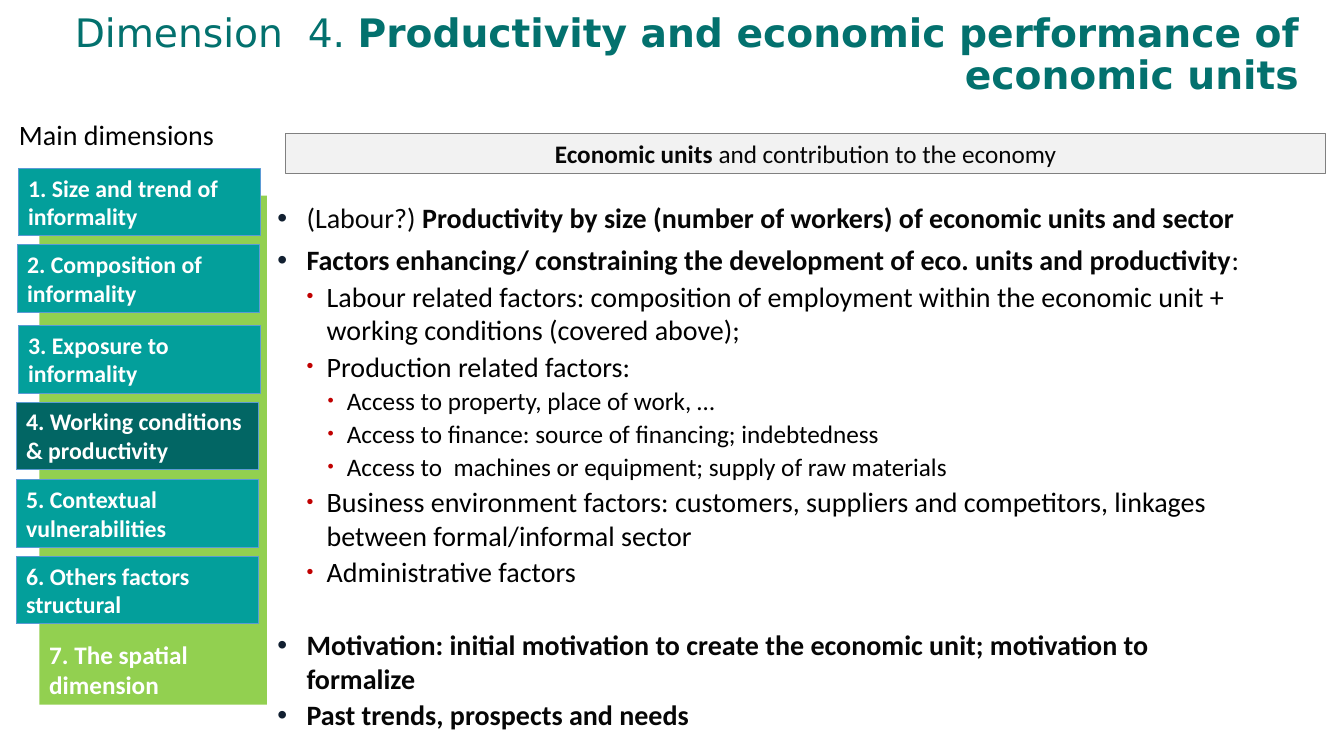
from lxml.etree import SubElement as Sub
from pptx import Presentation
from pptx.dml.color import RGBColor as RGB
from pptx.enum.shapes import MSO_SHAPE as SHAPE
from pptx.enum.text import MSO_ANCHOR as ANCHOR, MSO_AUTO_SIZE as AUTO, PP_ALIGN as ALIGN
from pptx.oxml.ns import qn
from pptx.util import Inches, Pt

TEAL, DARK, GREEN = "039F9B", "026664", "92D050"
BLACK, INK, WHITE = "000000", "060606", "FFFFFF"

STEPS = [
    (0.18, 1.67, "1. Size and trend of informality", TEAL),
    (0.17, 2.43, "2. Composition of informality", TEAL),
    (0.18, 3.23, "3. Exposure to informality", TEAL),
    (0.16, 3.99, "4. Working conditions & productivity", DARK),
    (0.16, 4.76, "5. Contextual vulnerabilities", TEAL),
    (0.16, 5.52, "6. Others factors structural", TEAL),
]

LEVELS = [
    dict(left=0.29, hang=0.29, dot="122031", scale=100, size=20, color=INK),
    dict(left=0.49, hang=0.2, dot="C00000", scale=70, size=20, color=BLACK),
    dict(left=0.69, hang=0.19, dot="C00000", scale=70, size=18, color=BLACK),
]

POINTS = [
    (0, 6, 6, "(Labour?)* Productivity by size (number of workers) of economic units and sector*"),
    (0, 0, 2, "*Factors enhancing/ constraining the development of eco. units and productivity*:"),
    (1, 0, 2, "Labour related factors: composition of employment within the economic unit"
              " + working conditions (covered above);"),
    (1, 0, 2, "Production related factors:"),
    (2, 0, 2, "Access to property, place of work, …"),
    (2, 0, 2, "Access to finance: source of financing; indebtedness"),
    (2, 0, 2, "Access to  machines or equipment; supply of raw materials"),
    (1, 0, 2, "Business environment factors: customers, suppliers and competitors,"
              " linkages between formal/informal sector"),
    (1, 0, 2, "Administrative factors"),
    (0, 26, 2, "*Motivation: initial motivation to create the economic unit; motivation to formalize*"),
    (0, 0, 2, "*Past trends, prospects and needs*"),
]


def rgb(code):
    """Turn a hex string into a colour."""
    return RGB.from_string(code)


def place(shape, left, top, width, height):
    """Move and size a shape, in inches."""
    shape.left, shape.top = Inches(left), Inches(top)
    shape.width, shape.height = Inches(width), Inches(height)


def paint(shape, fill, line=None):
    """Set the fill and the outline of a shape."""
    shape.fill.solid()
    shape.fill.fore_color.rgb = rgb(fill)
    if line:
        shape.line.color.rgb = rgb(line)
        shape.line.width = Pt(0.75)
    else:
        shape.line.fill.background()


def setup(frame, anchor=ANCHOR.TOP):
    """Wrap the text of a frame and fix its anchor."""
    frame.word_wrap = True
    frame.auto_size = AUTO.NONE
    frame.vertical_anchor = anchor


def write(para, text, size, color, align=ALIGN.LEFT, face="Calibri"):
    """Fill a paragraph; parts between asterisks are bold."""
    para.alignment = align
    font = para.font
    font.name, font.size, font.color.rgb = face, Pt(size), rgb(color)
    for num, part in enumerate(text.split("*")):
        if part:
            run = para.add_run()
            run.text = part
            run.font.bold = num % 2 == 1


def box(slide, area, fill, line, lines, size, color, align=ALIGN.LEFT, anchor=ANCHOR.TOP):
    """Add a filled rectangle with lines of text."""
    shape = slide.shapes.add_shape(SHAPE.RECTANGLE, *map(Inches, area))
    shape.shadow.inherit = False
    paint(shape, fill, line)
    frame = shape.text_frame
    setup(frame, anchor)
    for num, text in enumerate(lines):
        para = frame.add_paragraph() if num else frame.paragraphs[0]
        write(para, text, size, color, align)
    return shape


def bullet(para, left, hang, dot, scale):
    """Give a paragraph its indent and its coloured bullet."""
    props = para._p.get_or_add_pPr()
    props.set("marL", str(Inches(left)))
    props.set("indent", str(-Inches(hang)))
    Sub(Sub(props, qn("a:buClr")), qn("a:srgbClr"), val=dot)
    Sub(props, qn("a:buSzPct"), val=str(scale * 1000))
    Sub(props, qn("a:buFont"), typeface="Arial")
    Sub(props, qn("a:buChar"), char="•")


def points(body):
    """Write the bulleted list into the body placeholder."""
    place(body, 2.65, 1.94, 9.96, 5.41)
    paint(body, WHITE, WHITE)
    frame = body.text_frame
    setup(frame)
    for num, (level, before, after, text) in enumerate(POINTS):
        para = frame.add_paragraph() if num else frame.paragraphs[0]
        look = LEVELS[level]
        para.level = level
        para.space_before, para.space_after = Pt(before), Pt(after)
        bullet(para, look["left"], look["hang"], look["dot"], look["scale"])
        write(para, text, look["size"], look["color"])


def heading(title):
    """Write the slide title."""
    place(title, 0.31, 0.05, 12.67, 1.01)
    setup(title.text_frame, ANCHOR.MIDDLE)
    para = title.text_frame.paragraphs[0]
    para.line_spacing = 0.9
    text = "Dimension  4. *Productivity and economic performance of economic units*"
    write(para, text, 28, "03716E", ALIGN.RIGHT, "DejaVu Sans")


def label(slide):
    """Add the caption above the dimensions."""
    area = map(Inches, (0.09, 1.12, 2.2, 0.77))
    frame = slide.shapes.add_textbox(*area).text_frame
    setup(frame)
    write(frame.paragraphs[0], "Main dimensions", 20, BLACK)


def main():
    """Build and save the slide."""
    deck = Presentation()
    deck.slide_width, deck.slide_height = Inches(13.33), Inches(7.5)
    slide = deck.slides.add_slide(deck.slide_layouts[1])
    title, body = slide.placeholders
    heading(title)
    points(body)
    space = box(slide, (0.39, 1.94, 2.63, 5.05), GREEN, None,
                ["*7. The spatial*", "*dimension*"], 18, WHITE, anchor=ANCHOR.BOTTOM)
    title._element.addprevious(space._element)
    label(slide)
    box(slide, (2.83, 1.32, 10.32, 0.4), "F2F2F2", "808080",
        ["*Economic units *and contribution to the economy"], 18, INK, ALIGN.CENTER)
    for left, top, text, fill in STEPS:
        box(slide, (left, top, 2.4, 0.67), fill, "5B9BD5", [f"*{text}*"], 17, WHITE)
    deck.save("out.pptx")


if __name__ == "__main__":
    main()
